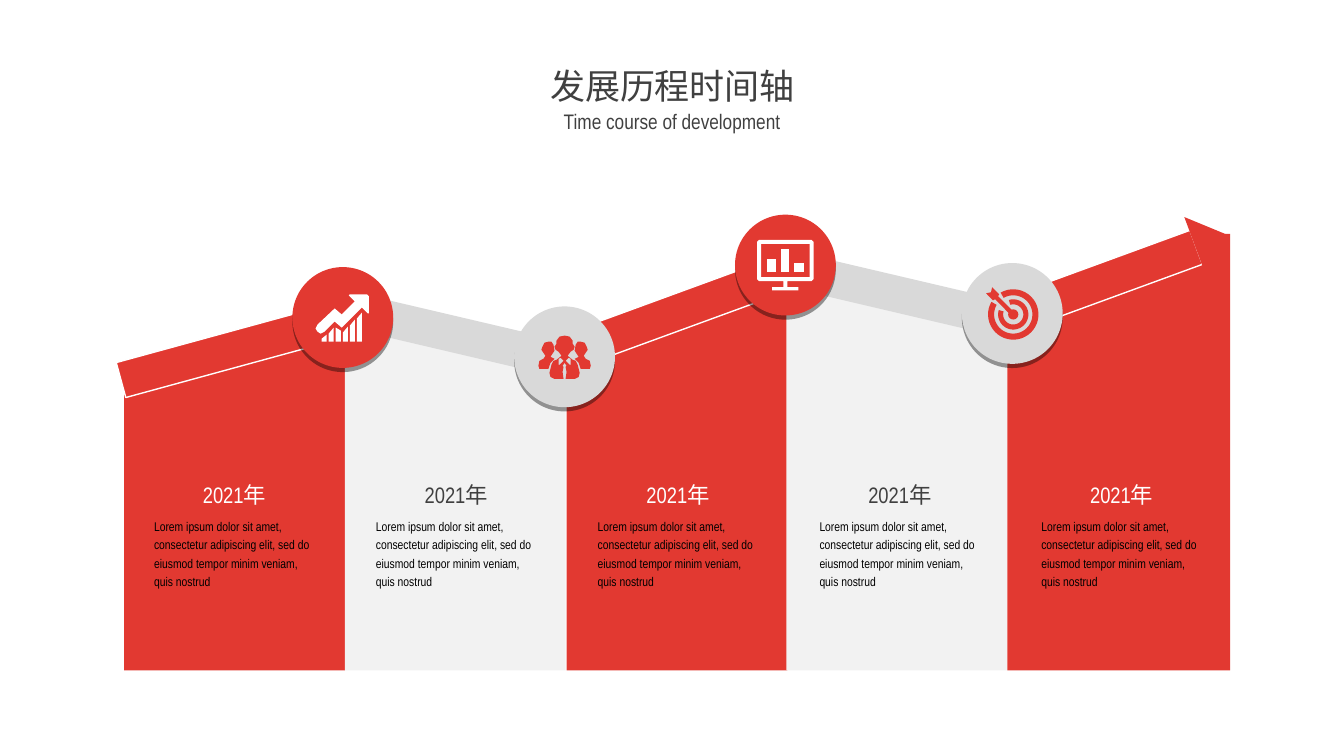
"""Build a five-column development timeline with a rising zigzag arrow."""
from math import cos, radians, sin

from pptx import Presentation
from pptx.dml.color import RGBColor
from pptx.enum.shapes import MSO_SHAPE as Preset
from pptx.enum.text import MSO_AUTO_SIZE as AutoSize, PP_ALIGN as Align
from pptx.oxml import parse_xml
from pptx.oxml.ns import nsdecls
from pptx.util import Inches, Pt

COLORS = {"red": "E23931", "gray": "D9D9D9", "pale": "F2F2F2",
          "white": "FFFFFF", "dark": "404040", "black": "000000"}
FONT = "Arial Narrow"
TITLE = "发展历程时间轴"
SUBTITLE = "Time course of development"
LOREM = ("Lorem ipsum dolor sit amet, consectetur adipiscing elit, "
         "sed do eiusmod tempor minim veniam, quis nostrud")
STAGES = [
    ("2021年", LOREM, "red", "white", [(1.23, 3.9), (3.39, 3.31), (3.32, 3.06), (3.42, 3.06)]),
    ("2021年", LOREM, "pale", "dark", [(3.42, 3.15), (3.45, 3.15), (3.44, 3.21), (5.61, 3.72)]),
    ("2021年", LOREM, "red", "white", [(5.62, 3.6), (7.81, 2.8)]),
    ("2021年", LOREM, "pale", "dark", [(7.8, 2.69), (7.83, 2.69), (7.81, 2.76), (9.99, 3.27)]),
    ("2021年", LOREM, "red", "white",
     [(9.99, 3.24), (11.94, 2.53), (11.98, 2.65), (12.15, 2.32), (12.2, 2.32)]),
]
COLUMN_BOTTOM = 6.65
TEXT_LEFT, TEXT_STEP = 1.43, 2.2

BANDS = [
    (3.37, 3.15, 2.38, 13.2, "gray"),
    (7.71, 2.74, 2.38, 13.2, "gray"),
    (1.16, 3.29, 2.28, 344.7, "red"),
    (5.47, 2.9, 2.59, 339.9, "red"),
    (9.8, 2.64, 2.13, 339.9, "red"),
]
BAND_HEIGHT = 0.36
ARROWHEAD = (11.7, 2.22, 0.63, 0.34)
MILESTONES = [(2.9, 2.65, "red"), (5.1, 3.04, "gray"), (7.29, 2.13, "red"), (9.54, 2.61, "gray")]

GROWTH_ARROW = [(3.47, 2.92), (3.64, 2.92), (3.66, 2.94), (3.66, 3.11), (3.65, 3.11),
                (3.59, 3.05), (3.39, 3.25), (3.32, 3.19), (3.22, 3.29), (3.18, 3.31),
                (3.15, 3.29), (3.13, 3.26), (3.15, 3.22), (3.32, 3.06), (3.39, 3.12),
                (3.52, 2.99), (3.46, 2.93)]
GROWTH_TOPS = [(3.36, 3.32), (3.31, 3.25), (3.25, 3.28), (3.3, 3.24), (3.23, 3.17), (3.16, 3.1)]
LEADER_HALF = [(5.6, 3.33), (5.65, 3.34), (5.68, 3.38), (5.68, 3.41), (5.7, 3.44),
               (5.69, 3.47), (5.66, 3.49), (5.63, 3.53), (5.68, 3.57), (5.71, 3.58),
               (5.73, 3.62), (5.75, 3.7), (5.74, 3.74), (5.7, 3.76), (5.61, 3.76),
               (5.62, 3.69), (5.61, 3.64), (5.62, 3.63), (5.6, 3.6)]
COLLAR = [(5.64, 3.55), (5.61, 3.58), (5.65, 3.62), (5.66, 3.62), (5.66, 3.56)]
COLLEAGUE = [(5.76, 3.39), (5.8, 3.4), (5.82, 3.44), (5.83, 3.47), (5.79, 3.53),
             (5.81, 3.56), (5.85, 3.58), (5.86, 3.63), (5.85, 3.66), (5.76, 3.66),
             (5.74, 3.6), (5.7, 3.56), (5.74, 3.54), (5.7, 3.48), (5.71, 3.42), (5.73, 3.39)]
TEAM_AXIS = 5.6
MONITOR = [(7.53, 2.38), (8.05, 2.38), (8.07, 2.4), (8.07, 2.77), (8.05, 2.79), (7.81, 2.79),
           (7.81, 2.85), (7.92, 2.85), (7.92, 2.88), (7.66, 2.88), (7.66, 2.85), (7.77, 2.85),
           (7.77, 2.79), (7.53, 2.79), (7.51, 2.77), (7.51, 2.4)]
SCREEN = (7.55, 2.42, 8.03, 2.75)
SCREEN_BARS = [(7.61, 2.57, 7.7, 2.7), (7.75, 2.47, 7.83, 2.7), (7.88, 2.61, 7.97, 2.7)]
DART = [(9.84, 2.85), (9.83, 2.9), (9.78, 2.91), (9.85, 2.98), (9.87, 2.97), (10.01, 3.11),
        (10.04, 3.08), (9.9, 2.94), (9.91, 2.92)]
TARGET = (10.05, 3.12)
RINGS = [(0.25, 0.19, 240, 570), (0.15, 0.1, 253, 557)]
BULLSEYE = 0.05


def box(left, top, right, bottom):
    return [(left, top), (right, top), (right, bottom), (left, bottom)]


def mirror(points):
    return [(2 * TEAM_AXIS - x, y) for x, y in reversed(points)]


def arc(radius, start, end, steps=40):
    angles = [radians(start + (end - start) * i / steps) for i in range(steps + 1)]
    return [(TARGET[0] + radius * cos(a), TARGET[1] + radius * sin(a)) for a in angles]


def growth_bar(index, tops):
    left, right = 3.19 + 0.07 * index, 3.24 + 0.07 * index
    return [(left, tops[0]), (right, tops[1]), (right, 3.39), (left, 3.39)]


ICONS = [
    ("white", [[GROWTH_ARROW]] + [[growth_bar(i, t)] for i, t in enumerate(GROWTH_TOPS)]),
    ("red", [[LEADER_HALF + mirror(LEADER_HALF), COLLAR, mirror(COLLAR)],
             [COLLEAGUE], [mirror(COLLEAGUE)]]),
    ("white", [[MONITOR, box(*SCREEN)]] + [[box(*bar)] for bar in SCREEN_BARS]),
    ("red", [[arc(outer, a, b) + arc(inner, b, a)] for outer, inner, a, b in RINGS]
     + [[arc(BULLSEYE, 0, 360)], [DART]]),
]

deck = Presentation()
deck.slide_width, deck.slide_height = Inches(13.33), Inches(7.5)
slide = deck.slides.add_slide(deck.slide_layouts[6])


def color(name):
    return RGBColor.from_string(COLORS[name])


def paint(shape, fill, outline=None):
    shape.shadow.inherit = False
    shape.fill.solid()
    shape.fill.fore_color.rgb = color(fill)
    if outline:
        shape.line.color.rgb = color(outline)
        shape.line.width = Pt(1)
    else:
        shape.line.fill.background()
    return shape


def add_preset(preset, bounds, fill, outline=None, rotation=0):
    shape = slide.shapes.add_shape(preset, *map(Inches, bounds))
    shape.rotation = rotation
    return paint(shape, fill, outline)


def add_outline(contours, fill):
    contours = [[(Inches(x), Inches(y)) for x, y in points] for points in contours]
    builder = slide.shapes.build_freeform(*contours[0][0])
    for index, (start, *rest) in enumerate(contours):
        if index:
            builder.move_to(*start)
        builder.add_line_segments(rest, close=True)
    return paint(builder.convert_to_shape(), fill)


def add_text(bounds, text, size, ink, **paragraph_format):
    frame = slide.shapes.add_textbox(*map(Inches, bounds)).text_frame
    frame.word_wrap = True
    frame.auto_size = AutoSize.SHAPE_TO_FIT_TEXT
    paragraph = frame.paragraphs[0]
    for key, value in paragraph_format.items():
        setattr(paragraph, key, value)
    run = paragraph.add_run()
    run.text = text
    for key, value in {"name": FONT, "size": Pt(size)}.items():
        setattr(run.font, key, value)
    run.font.color.rgb = color(ink)


def drop_shadow(shape):
    effects = shape.fill._xPr.find("{*}effectLst")
    effects.append(parse_xml(
        f'<a:outerShdw {nsdecls("a")} blurRad="0" dist="{Pt(3)}" dir="5400000" '
        f'algn="t" rotWithShape="0"><a:srgbClr val="{COLORS["black"]}">'
        '<a:alpha val="40000"/></a:srgbClr></a:outerShdw>'))


for _, _, fill, _, edge in STAGES:
    left, right = edge[0][0], edge[-1][0]
    add_outline([edge + [(right, COLUMN_BOTTOM), (left, COLUMN_BOTTOM)]], fill)

for left, top, width, angle, fill in BANDS:
    add_preset(Preset.RECTANGLE, (left, top, width, BAND_HEIGHT), fill,
               "white" if fill == "red" else None, angle)
add_preset(Preset.ISOSCELES_TRIANGLE, ARROWHEAD, "red", rotation=69.7)

for left, top, fill in MILESTONES:
    drop_shadow(add_preset(Preset.OVAL, (left, top, 1, 1), fill))
for fill, parts in ICONS:
    for contours in parts:
        add_outline(contours, fill)

for index, (year, story, _, ink, _) in enumerate(STAGES):
    left = TEXT_LEFT + TEXT_STEP * index
    add_text((left, 5.07, 1.77, 0.81), story, 9, "black", line_spacing=1.2)
    add_text((left + 0.26, 4.72, 1.27, 0.37), year, 16, ink, alignment=Align.CENTER)

add_text((4.99, 0.59, 3.36, 0.52), TITLE, 25, "dark", alignment=Align.CENTER)
add_text((4.46, 1.03, 4.41, 0.35), SUBTITLE, 15, "dark", alignment=Align.CENTER)

deck.save("out.pptx")
